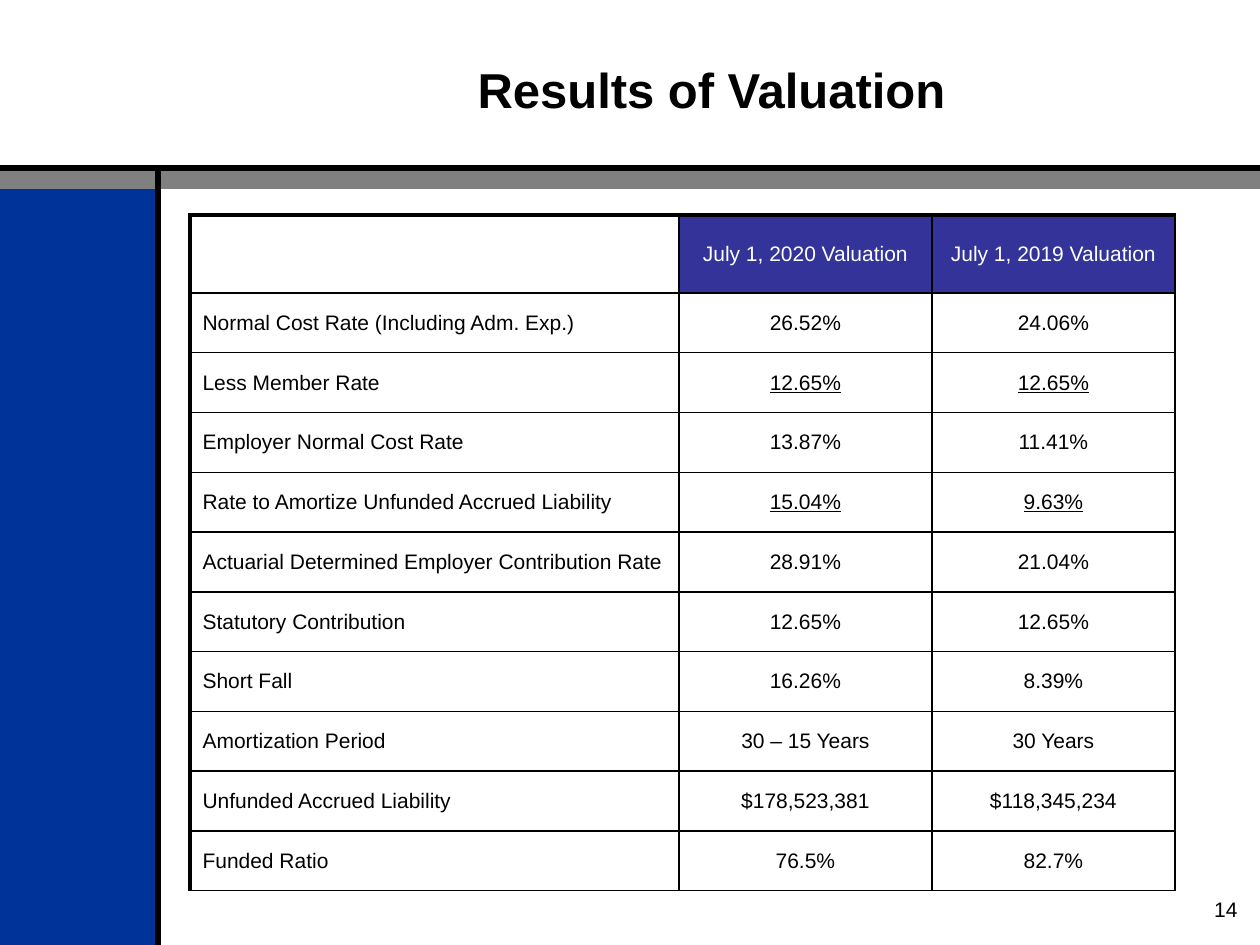
from dataclasses import dataclass

from lxml import etree
from pptx import Presentation
from pptx.dml.color import RGBColor
from pptx.enum.shapes import MSO_CONNECTOR, MSO_SHAPE
from pptx.enum.text import MSO_ANCHOR, PP_ALIGN
from pptx.oxml.ns import qn
from pptx.util import Pt

LEFT, MID, RIGHT = PP_ALIGN.LEFT, PP_ALIGN.CENTER, PP_ALIGN.RIGHT
TOP, CENTER = MSO_ANCHOR.TOP, MSO_ANCHOR.MIDDLE

# Content
TITLE = "Results of Valuation"
PAGE = "14"
HEAD = ("", "July 1, 2020 Valuation", "July 1, 2019 Valuation")
ROWS = [
    ("Normal Cost Rate (Including Adm. Exp.)", "26.52%", "24.06%"),
    ("Less Member Rate", "12.65%", "12.65%"),
    ("Employer Normal Cost Rate", "13.87%", "11.41%"),
    ("Rate to Amortize Unfunded Accrued Liability", "15.04%", "9.63%"),
    ("Actuarial Determined Employer Contribution Rate", "28.91%", "21.04%"),
    ("Statutory Contribution", "12.65%", "12.65%"),
    ("Short Fall", "16.26%", "8.39%"),
    ("Amortization Period", "30 – 15 Years", "30 Years"),
    ("Unfunded Accrued Liability", "$178,523,381", "$118,345,234"),
    ("Funded Ratio", "76.5%", "82.7%"),
]
SUMS = {"Less Member Rate", "Rate to Amortize Unfunded Accrued Liability"}

# Layout in px
WIDE, HIGH = 1260, 945
TITLE_BOX = (462, 53, 499, 72)
PAGE_BOX = (1197, 890, 53, 65)
BARS = [((0, 189, 158, 756), "side"), ((0, 168, 1260, 21), "band")]
RULES = [(158, 168, 158, 945), (0, 168, 1260, 168)]
GRID_X, GRID_Y = 190, 215
COLS = (489, 253, 243)
HEAD_H, BODY_H = 78, 598


@dataclass(frozen=True)
class Theme:
    font: str = "Arial"
    ink: str = "000000"
    paper: str = "FFFFFF"
    side: str = "003399"
    band: str = "808080"
    head: str = "333399"
    title: int = 28
    text: int = 12
    rule: float = 3
    edge: float = 2.25
    thin: float = 1


THEME = Theme()


def px(num):
    return round(num * 914400 / 126)


def rgb(code):
    return RGBColor.from_string(code)


def write(frame, text, size=THEME.text, color=THEME.ink, bold=False,
          under=False, align=LEFT, anchor=CENTER, wrap=True):
    frame.word_wrap = wrap
    frame.vertical_anchor = anchor
    para = frame.paragraphs[0]
    para.alignment = align
    run = para.add_run()
    run.text = text
    font = run.font
    font.name, font.size = THEME.font, Pt(size)
    font.bold, font.underline = bold, under
    font.color.rgb = rgb(color)


def add_bar(slide, box, color):
    bar = slide.shapes.add_shape(MSO_SHAPE.RECTANGLE, *map(px, box))
    bar.shadow.inherit = False
    bar.fill.solid()
    bar.fill.fore_color.rgb = rgb(color)
    bar.line.fill.background()


def add_rule(slide, ends):
    rule = slide.shapes.add_connector(MSO_CONNECTOR.STRAIGHT, *map(px, ends))
    rule.line.color.rgb = rgb(THEME.ink)
    rule.line.width = Pt(THEME.rule)
    props = rule._element.spPr
    etree.SubElement(props, qn("a:effectLst"))


def frame_cell(cell, row, col):
    props = cell._tc.get_or_add_tcPr()
    sides = {
        "a:lnL": THEME.thin if col else THEME.edge,
        "a:lnR": THEME.thin,
        "a:lnT": THEME.thin if row else THEME.edge,
        "a:lnB": THEME.thin,
    }
    for spot, (tag, width) in enumerate(sides.items()):
        line = etree.Element(qn(tag), w=str(Pt(width)))
        fill = etree.SubElement(line, qn("a:solidFill"))
        etree.SubElement(fill, qn("a:srgbClr"), val=THEME.ink)
        props.insert(spot, line)


def add_grid(slide):
    data = [HEAD, *ROWS]
    box = map(px, (GRID_X, GRID_Y, sum(COLS), HEAD_H + BODY_H))
    table = slide.shapes.add_table(len(data), len(COLS), *box).table
    table.first_row = table.horz_banding = False
    for col, width in enumerate(COLS):
        table.columns[col].width = px(width)
    for row, texts in enumerate(data):
        table.rows[row].height = px(BODY_H / len(ROWS) if row else HEAD_H)
        for col, text in enumerate(texts):
            cell = table.cell(row, col)
            top = row == 0 and col > 0
            if top:
                cell.fill.solid()
                cell.fill.fore_color.rgb = rgb(THEME.head)
            else:
                cell.fill.background()
            cell.vertical_anchor = CENTER
            frame_cell(cell, row, col)
            if text:
                write(cell.text_frame, text,
                      color=THEME.paper if top else THEME.ink,
                      under=col > 0 and texts[0] in SUMS,
                      align=MID if col else LEFT)


def main():
    deck = Presentation()
    deck.slide_width, deck.slide_height = px(WIDE), px(HIGH)
    slide = deck.slides.add_slide(deck.slide_layouts[5])

    # Side panel, band and rules
    for box, name in BARS:
        add_bar(slide, box, getattr(THEME, name))
    for ends in RULES:
        add_rule(slide, ends)

    # Page number and table
    page = slide.shapes.add_textbox(*map(px, PAGE_BOX))
    write(page.text_frame, PAGE, align=RIGHT, anchor=TOP)
    add_grid(slide)

    # Title
    title = slide.shapes.title
    title.left, title.top, title.width, title.height = map(px, TITLE_BOX)
    write(title.text_frame, TITLE, size=THEME.title, bold=True,
          align=MID, wrap=False)

    deck.save("out.pptx")


if __name__ == "__main__":
    main()
